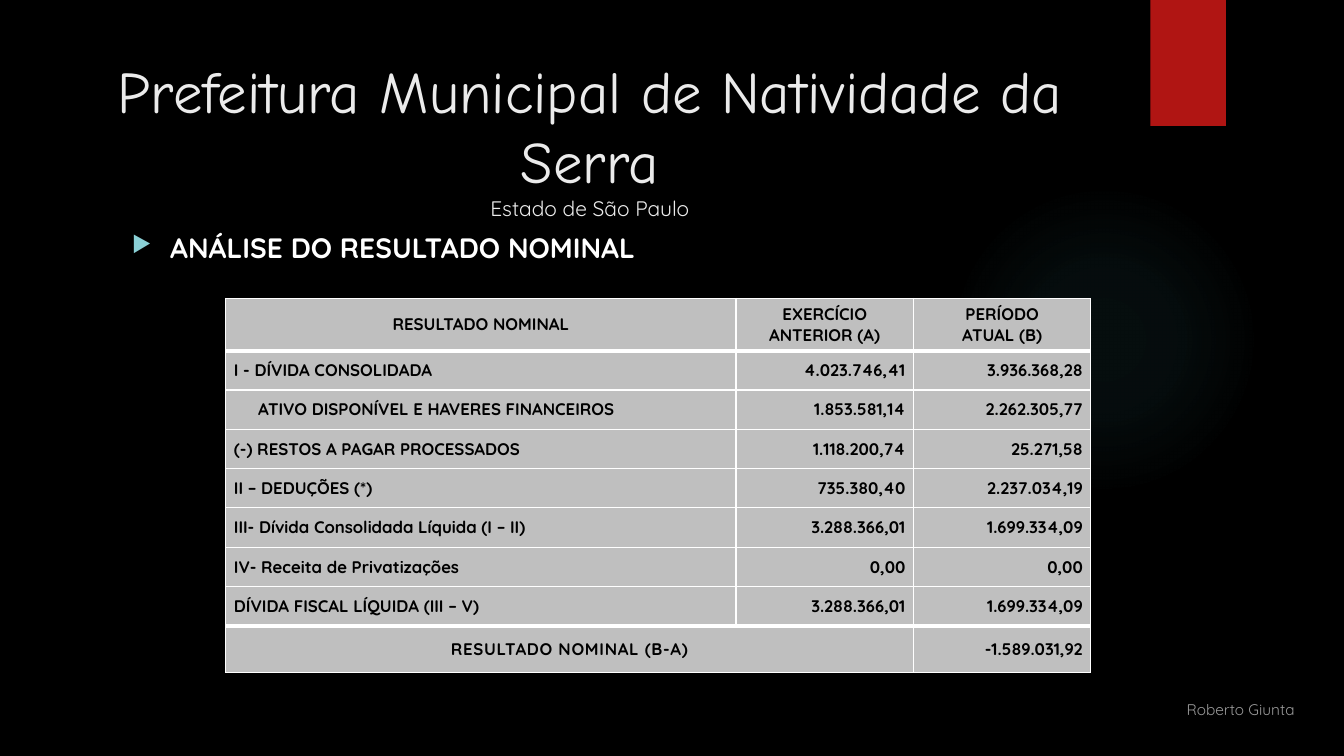
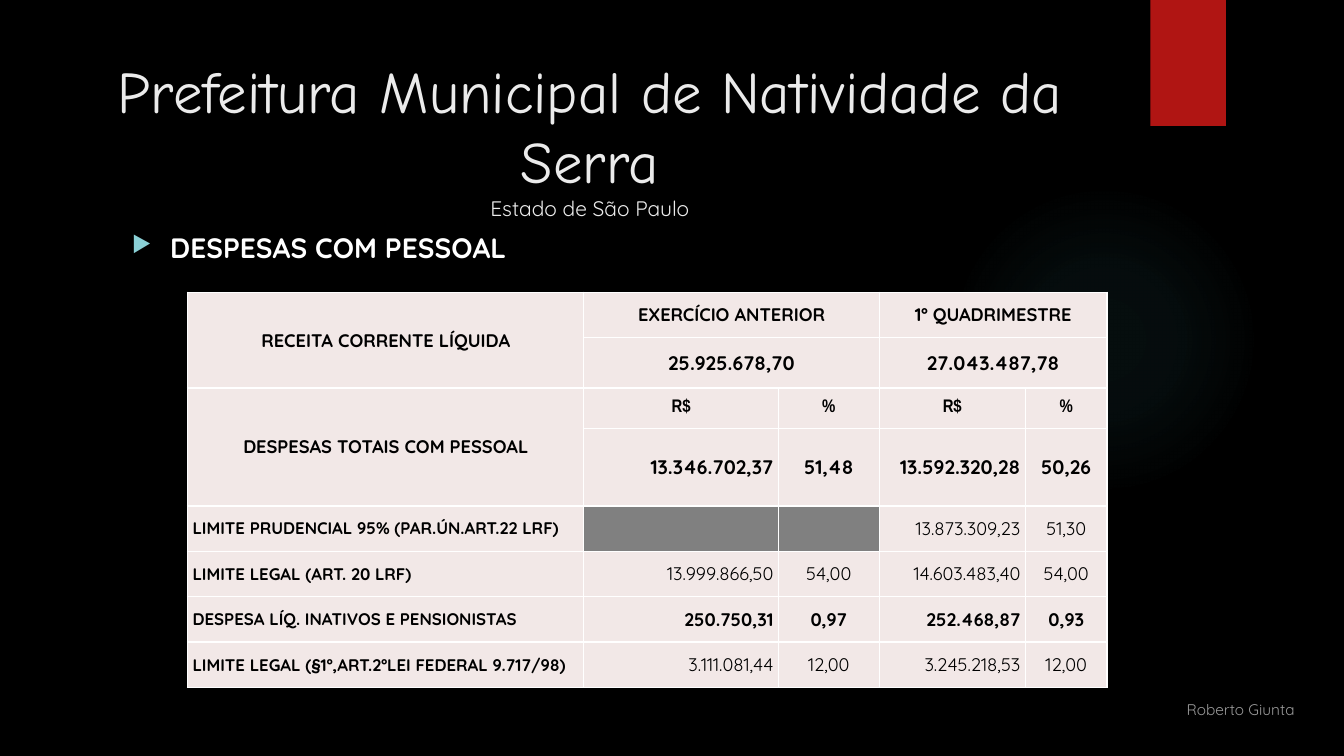
from dataclasses import dataclass
from typing import Any, Optional

from lxml import etree
from pptx import Presentation
from pptx.dml.color import RGBColor
from pptx.enum.shapes import MSO_SHAPE
from pptx.enum.text import MSO_ANCHOR, PP_ALIGN
from pptx.oxml import parse_xml
from pptx.oxml.ns import nsdecls, qn
from pptx.util import Inches, Pt

LEFT, CENTER, RIGHT = PP_ALIGN.LEFT, PP_ALIGN.CENTER, PP_ALIGN.RIGHT
TOP, MIDDLE, BOTTOM = MSO_ANCHOR.TOP, MSO_ANCHOR.MIDDLE, MSO_ANCHOR.BOTTOM
OVAL, RECTANGLE = MSO_SHAPE.OVAL, MSO_SHAPE.RECTANGLE

BLACK, WHITE, TITLE_WHITE = "000000", "FFFFFF", "EBEBEB"
RED, GLOW, BULLET = "B01513", "50B9C1", "8AD0D6"
SILVER, ROSE, GRAY = "BFBFBF", "F2E8E7", "808080"
BODY_FONT, TITLE_FONT, NARROW_FONT = "Quicksand", "Comic Neue", "Arial Narrow"
GLOW_STOPS = ((0, 7), (36, 6), (69, 0))


@dataclass(frozen=True)
class Entry:
    text: str = ""
    align: Any = RIGHT
    size: float = 12
    bold: bool = True
    font: str = BODY_FONT
    rows: int = 1
    cols: int = 1
    indent: float = 0
    spacing: float = 0
    fill: Optional[str] = None


@dataclass(frozen=True)
class Sheet:
    heading: str
    left: float
    top: float
    cols: tuple[float, ...]
    rows: tuple[float, ...]
    fill: str
    inset: float
    entries: list[list[Optional[Entry]]]
    thick_edges: tuple[int, ...] = ()


def rgb(color: str) -> RGBColor:
    return RGBColor.from_string(color)


def apply(target: Any, values: dict[str, Any]) -> None:
    for name, value in values.items():
        setattr(target, name, value)


def write(paragraph: Any, text: str, size: float, font: str, color: str,
          bold: bool = False) -> Any:
    run = paragraph.add_run()
    run.text = text
    apply(run.font, {"size": Pt(size), "name": font, "bold": bold})
    run.font.color.rgb = rgb(color)
    return run


def add_box(slide: Any, left: float, top: float, width: float, height: float,
            anchor: Any = TOP) -> Any:
    box = slide.shapes.add_textbox(Inches(left), Inches(top), Inches(width), Inches(height))
    apply(box.text_frame, {"word_wrap": True, "vertical_anchor": anchor})
    return box.text_frame


def add_plain_shape(slide: Any, preset: Any, left: float, top: float,
                    width: float, height: float) -> Any:
    shape = slide.shapes.add_shape(preset, Inches(left), Inches(top),
                                   Inches(width), Inches(height))
    shape.shadow.inherit = False
    shape.line.fill.background()
    return shape


def add_glow(slide: Any) -> None:
    glow = add_plain_shape(slide, OVAL, 9.41, 1.83, 3.08, 3.08)
    stops = "".join(
        f'<a:gs pos="{position * 1000}"><a:srgbClr val="{GLOW}">'
        f'<a:alpha val="{alpha * 1000}"/></a:srgbClr></a:gs>'
        for position, alpha in GLOW_STOPS
    )
    gradient = parse_xml(
        f'<a:gradFill {nsdecls("a")} rotWithShape="1"><a:gsLst>{stops}</a:gsLst>'
        '<a:path path="circle"><a:fillToRect l="50000" t="50000" r="50000" b="50000"/>'
        "</a:path></a:gradFill>"
    )
    glow._element.spPr.find(qn("a:prstGeom")).addnext(gradient)


def add_title(slide: Any) -> None:
    frame = add_box(slide, 0.71, 0.49, 10.28, 1.53)
    town, state = frame.paragraphs[0], frame.add_paragraph()
    write(town, "Prefeitura Municipal de Natividade da Serra", 42, TITLE_FONT, TITLE_WHITE)
    write(state, "Estado de São Paulo", 15, BODY_FONT, TITLE_WHITE)
    town.alignment = state.alignment = CENTER


def add_heading(slide: Any, text: str) -> None:
    paragraph = add_box(slide, 1.21, 2.24, 9.78, 0.5).paragraphs[0]
    properties = paragraph._p.get_or_add_pPr()
    properties.set("marL", str(Inches(0.38)))
    properties.set("indent", str(-Inches(0.38)))
    color = etree.SubElement(properties, qn("a:buClr"))
    etree.SubElement(color, qn("a:srgbClr"), val=BULLET)
    etree.SubElement(properties, qn("a:buSzPct"), val="80000")
    etree.SubElement(properties, qn("a:buChar"), char="▶")
    write(paragraph, text, 20, BODY_FONT, WHITE, True)


def add_footer(slide: Any) -> None:
    paragraph = add_box(slide, 8.72, 6.85, 4.22, 0.33, BOTTOM).paragraphs[0]
    paragraph.alignment = RIGHT
    run = write(paragraph, "Roberto Giunta", 11, BODY_FONT, WHITE)
    color = run._r.rPr.find(".//" + qn("a:srgbClr"))
    etree.SubElement(color, qn("a:alpha"), val="60000")


def set_borders(cell: Any, top: float, bottom: float) -> None:
    properties = cell._tc.get_or_add_tcPr()
    for side, width in (("L", 1), ("R", 1), ("T", top), ("B", bottom)):
        line = etree.SubElement(properties, qn(f"a:ln{side}"), w=str(Pt(width)))
        fill = etree.SubElement(line, qn("a:solidFill"))
        etree.SubElement(fill, qn("a:srgbClr"), val=WHITE)


def fill_entry(cell: Any, entry: Entry) -> None:
    for index, text in enumerate(entry.text.split("\n")):
        frame = cell.text_frame
        paragraph = frame.add_paragraph() if index else frame.paragraphs[0]
        paragraph.alignment = entry.align
        if entry.indent:
            paragraph._p.get_or_add_pPr().set("marL", str(Inches(entry.indent)))
        if text:
            run = write(paragraph, text, entry.size, entry.font, BLACK, entry.bold)
            if entry.spacing:
                run._r.get_or_add_rPr().set("spc", str(round(entry.spacing * 100)))


def add_sheet(slide: Any, sheet: Sheet) -> None:
    table = slide.shapes.add_table(
        len(sheet.rows), len(sheet.cols), Inches(sheet.left), Inches(sheet.top),
        Inches(sum(sheet.cols)), Inches(sum(sheet.rows))).table
    apply(table, {"first_row": False, "horz_banding": False})
    for column, width in zip(table.columns, sheet.cols):
        column.width = Inches(width)
    for row, height in zip(table.rows, sheet.rows):
        row.height = Inches(height)
    margins = {"margin_left": Inches(sheet.inset), "margin_right": Inches(sheet.inset),
               "margin_top": 0, "margin_bottom": 0, "vertical_anchor": MIDDLE}
    for r, entries in enumerate(sheet.entries):
        top, bottom = (3 if edge in sheet.thick_edges else 1 for edge in (r, r + 1))
        for c, entry in enumerate(entries):
            cell = table.cell(r, c)
            apply(cell, margins)
            set_borders(cell, top, bottom)
            cell.fill.solid()
            cell.fill.fore_color.rgb = rgb(entry.fill if entry and entry.fill else sheet.fill)
            if entry is None:
                continue
            if entry.rows > 1 or entry.cols > 1:
                cell.merge(table.cell(r + entry.rows - 1, c + entry.cols - 1))
            fill_entry(cell, entry)


def add_sheet_slide(deck: Any, sheet: Sheet) -> None:
    slide = deck.slides.add_slide(deck.slide_layouts[6])
    slide.background.fill.solid()
    slide.background.fill.fore_color.rgb = rgb(BLACK)
    add_glow(slide)
    ribbon = add_plain_shape(slide, RECTANGLE, 11.41, 0, 0.75, 1.25)
    ribbon.fill.solid()
    ribbon.fill.fore_color.rgb = rgb(RED)
    add_heading(slide, sheet.heading)
    add_sheet(slide, sheet)
    add_footer(slide)
    add_title(slide)


def result_row(label: str, previous: str, current: str,
               indent: float = 0) -> list[Optional[Entry]]:
    return [Entry(label, LEFT, indent=indent), Entry(previous), Entry(current)]


def amounts(values: tuple[str, ...], size: float, bold: bool) -> list[Optional[Entry]]:
    return [Entry(value, CENTER if index % 2 else RIGHT, size, bold)
            for index, value in enumerate(values)]


def limit_row(label: str, *values: str, bold: bool = False) -> list[Optional[Entry]]:
    return [Entry(label, LEFT), *amounts(values, 13, bold)]


def pair_row(label: Optional[Entry], previous: str, current: str,
             size: float) -> list[Optional[Entry]]:
    return [label, Entry(previous, CENTER, size, cols=2), None,
            Entry(current, CENTER, size, cols=2), None]


NOMINAL_RESULT = Sheet(
    "ANÁLISE DO RESULTADO NOMINAL", 2.24, 2.96,
    (5.06, 1.76, 1.76), (0.52, *[0.39] * 7, 0.46), SILVER, 0.08,
    [
        [Entry(text, CENTER) for text in
         ("RESULTADO NOMINAL", "EXERCÍCIO\nANTERIOR (A)", "PERÍODO\nATUAL (B)")],
        result_row("I - DÍVIDA CONSOLIDADA", "4.023.746,41", "3.936.368,28"),
        result_row("ATIVO DISPONÍVEL E HAVERES FINANCEIROS",
                   "1.853.581,14", "2.262.305,77", 0.24),
        result_row("(-) RESTOS A PAGAR PROCESSADOS", "1.118.200,74", "25.271,58"),
        result_row("II – DEDUÇÕES (*)", "735.380,40", "2.237.034,19"),
        result_row("III- Dívida Consolidada Líquida (I – II)", "3.288.366,01", "1.699.334,09"),
        result_row("IV- Receita de Privatizações", "0,00", "0,00"),
        result_row("DÍVIDA FISCAL LÍQUIDA (III – V)", "3.288.366,01", "1.699.334,09"),
        [Entry("RESULTADO NOMINAL (B-A)", CENTER, cols=2, spacing=0.5), None,
         Entry("-1.589.031,92")],
    ],
    thick_edges=(1, 8),
)

STAFF_EXPENSES = Sheet(
    "DESPESAS COM PESSOAL", 1.86, 2.9,
    (3.93, 1.93, 1, 1.45, 0.81), (0.45, 0.5, 0.4, 0.77, *[0.45] * 4), ROSE, 0.05,
    [
        pair_row(Entry("RECEITA CORRENTE LÍQUIDA", CENTER, 13, rows=2),
                 "EXERCÍCIO ANTERIOR", "1º QUADRIMESTRE", 13),
        pair_row(None, "25.925.678,70", "27.043.487,78", 14),
        [Entry("DESPESAS TOTAIS COM PESSOAL", CENTER, 13, rows=2),
         *[Entry(unit, CENTER, 13, font=NARROW_FONT) for unit in ("R$", "%") * 2]],
        [None, *amounts(("13.346.702,37", "51,48", "13.592.320,28", "50,26"), 14, True)],
        [Entry("LIMITE PRUDENCIAL 95% (PAR.ÚN.ART.22 LRF)", LEFT),
         *[Entry(fill=GRAY)] * 2, *amounts(("13.873.309,23", "51,30"), 13, False)],
        limit_row("LIMITE LEGAL (ART. 20 LRF)",
                  "13.999.866,50", "54,00", "14.603.483,40", "54,00"),
        limit_row("DESPESA LÍQ. INATIVOS E PENSIONISTAS",
                  "250.750,31", "0,97", "252.468,87", "0,93", bold=True),
        limit_row("LIMITE LEGAL (§1º,ART.2ºLEI FEDERAL 9.717/98)",
                  "3.111.081,44", "12,00", "3.245.218,53", "12,00"),
    ],
)


def main() -> None:
    deck = Presentation()
    apply(deck, {"slide_width": Inches(13.33), "slide_height": Inches(7.5)})
    for sheet in (NOMINAL_RESULT, STAFF_EXPENSES):
        add_sheet_slide(deck, sheet)
    deck.save("out.pptx")


if __name__ == "__main__":
    main()
